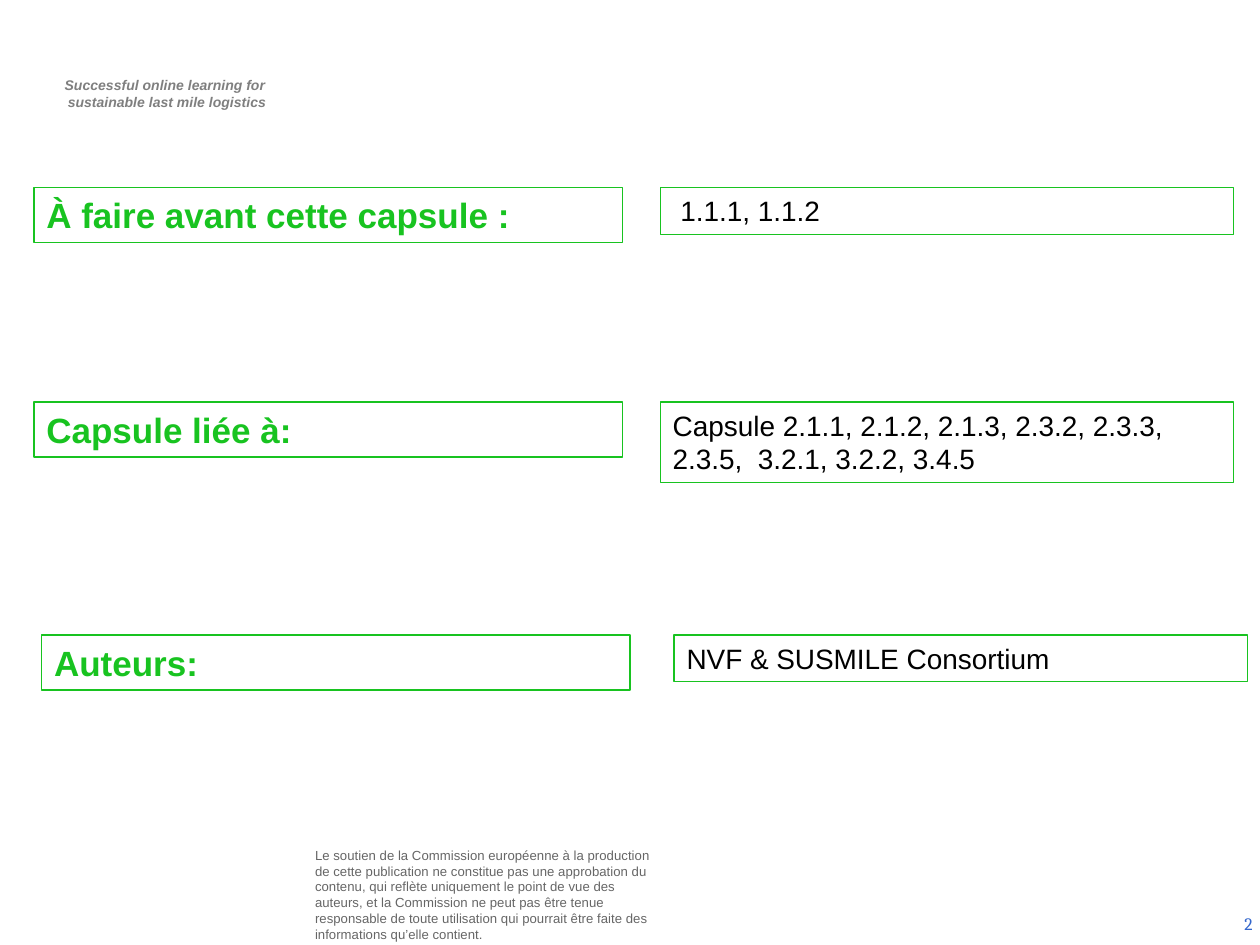
from pptx import Presentation
from pptx import util as u
from pptx.dml.color import RGBColor
from pptx.enum import shapes, text

GREEN, WHITE = "18C320", "FFFFFF"
HEAD = {"name": "Arial", "size": u.Pt(20), "bold": True}
BODY = {"name": "Arial", "size": u.Pt(16), "bold": False}
TAG = {"name": "Arial", "size": u.Pt(8), "bold": True, "italic": True}
NOTE = {"name": "Arial", "size": u.Pt(7.5)}
PAGE = {"name": "Cambria", "size": u.Pt(10)}

# top, left of heading, left of answer, heading, answer, answer height
ROWS = [
    (107.3, 19.4, 377.3, "À faire avant cette capsule :", " 1.1.1, 1.1.2", 26.6),
    (229.7, 19.4, 377.3, "Capsule liée à:",
     "Capsule 2.1.1, 2.1.2, 2.1.3, 2.3.2, 2.3.3, 2.3.5,  3.2.1, 3.2.2, 3.4.5", 46),
    (362.9, 23.8, 385.2, "Auteurs:", "NVF & SUSMILE Consortium", 26.6),
]


def rgb(code):
    return RGBColor.from_string(code)


def write(shape, lines, style, color, align="LEFT", anchor="TOP", pad=(7.2, 3.6), indent=0):
    """Fill a shape with one paragraph per line; pad is side and top inset."""
    frame = shape.text_frame
    frame.word_wrap = True
    frame.vertical_anchor = getattr(text.MSO_ANCHOR, anchor)
    frame.margin_left = frame.margin_right = u.Pt(pad[0])
    frame.margin_top = frame.margin_bottom = u.Pt(pad[1])
    frame.text = "\n".join(lines)
    for para in frame.paragraphs:
        para.alignment = getattr(text.PP_ALIGN, align)
        if indent:
            para._p.get_or_add_pPr().set("marL", str(u.Pt(indent)))
        for run in para.runs:
            for key, value in style.items():
                setattr(run.font, key, value)
            run.font.color.rgb = rgb(color)


def add_text(slide, box, lines, style, color, **layout):
    shape = slide.shapes.add_textbox(*map(u.Pt, box))
    write(shape, lines, style, color, **layout)


def add_frame(slide, box, line, style, color):
    shape = slide.shapes.add_shape(shapes.MSO_SHAPE.RECTANGLE, *map(u.Pt, box))
    shape.shadow.inherit = False
    shape.fill.solid()
    shape.fill.fore_color.rgb = rgb(WHITE)
    shape.line.color.rgb = rgb(GREEN)
    shape.line.width = u.Pt(0.75)
    write(shape, [line], style, color)
    shape.text_frame.auto_size = text.MSO_AUTO_SIZE.SHAPE_TO_FIT_TEXT


def main():
    deck = Presentation()
    deck.slide_width, deck.slide_height = u.Pt(720), u.Pt(540)
    slide = deck.slides.add_slide(deck.slide_layouts[6])

    add_text(slide, (21, 40.3, 146, 26.6),
             ["Successful online learning for ", "sustainable last mile logistics"],
             TAG, "7F7F7F", align="CENTER", indent=2.9)
    add_text(slide, (177.1, 493.2, 202.3, 36),
             ["Le soutien de la Commission européenne à la production de cette "
              "publication ne constitue pas une approbation du contenu, qui reflète "
              "uniquement le point de vue des auteurs, et la Commission ne peut pas "
              "être tenue responsable de toute utilisation qui pourrait être faite "
              "des informations qu’elle contient."],
             NOTE, "666666", anchor="MIDDLE", pad=(2.9, 2.9))
    add_text(slide, (555.1, 513.4, 167.8, 28.8), ["2"], PAGE, "3366CC",
             align="RIGHT", anchor="MIDDLE")

    for top, left, right, head, answer, height in ROWS:
        add_frame(slide, (left, top, 336.2, 31.5), head, HEAD, GREEN)
        add_frame(slide, (right, top, 327.6, height), answer, BODY, "000000")

    deck.save("out.pptx")


if __name__ == "__main__":
    main()
